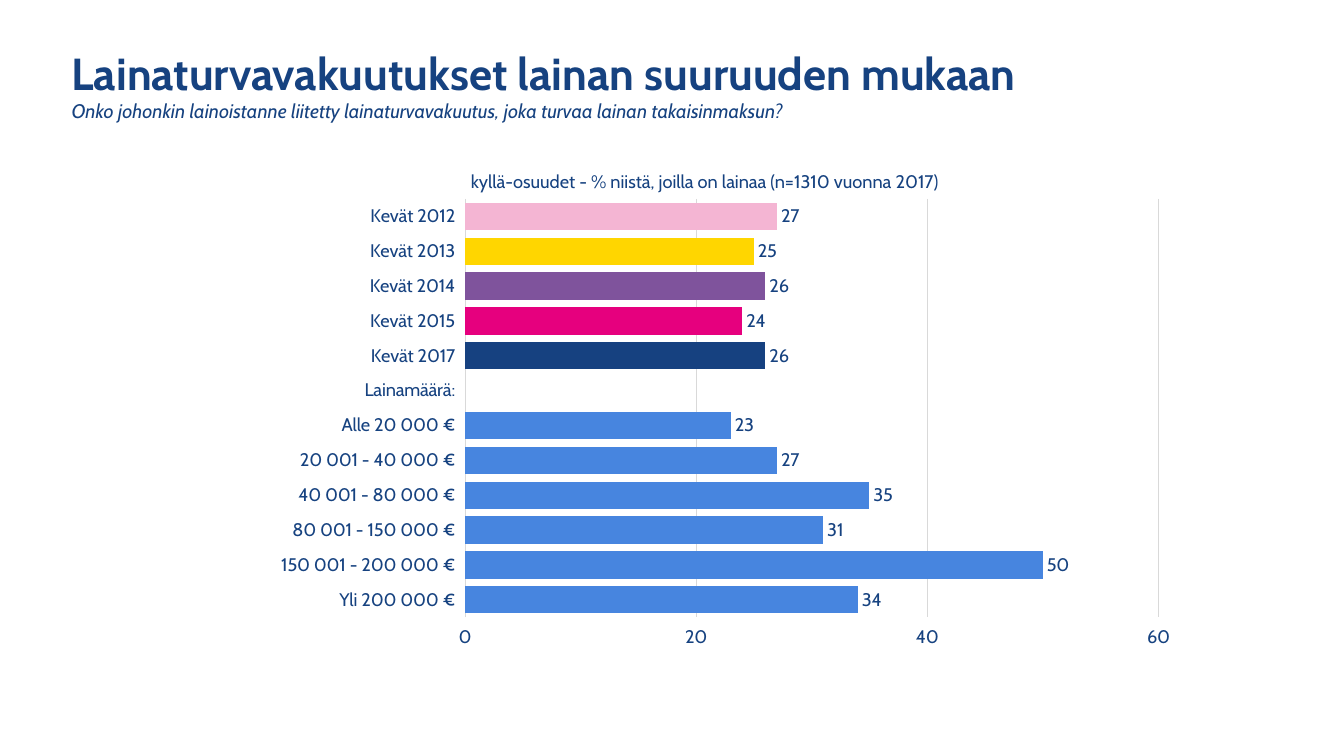
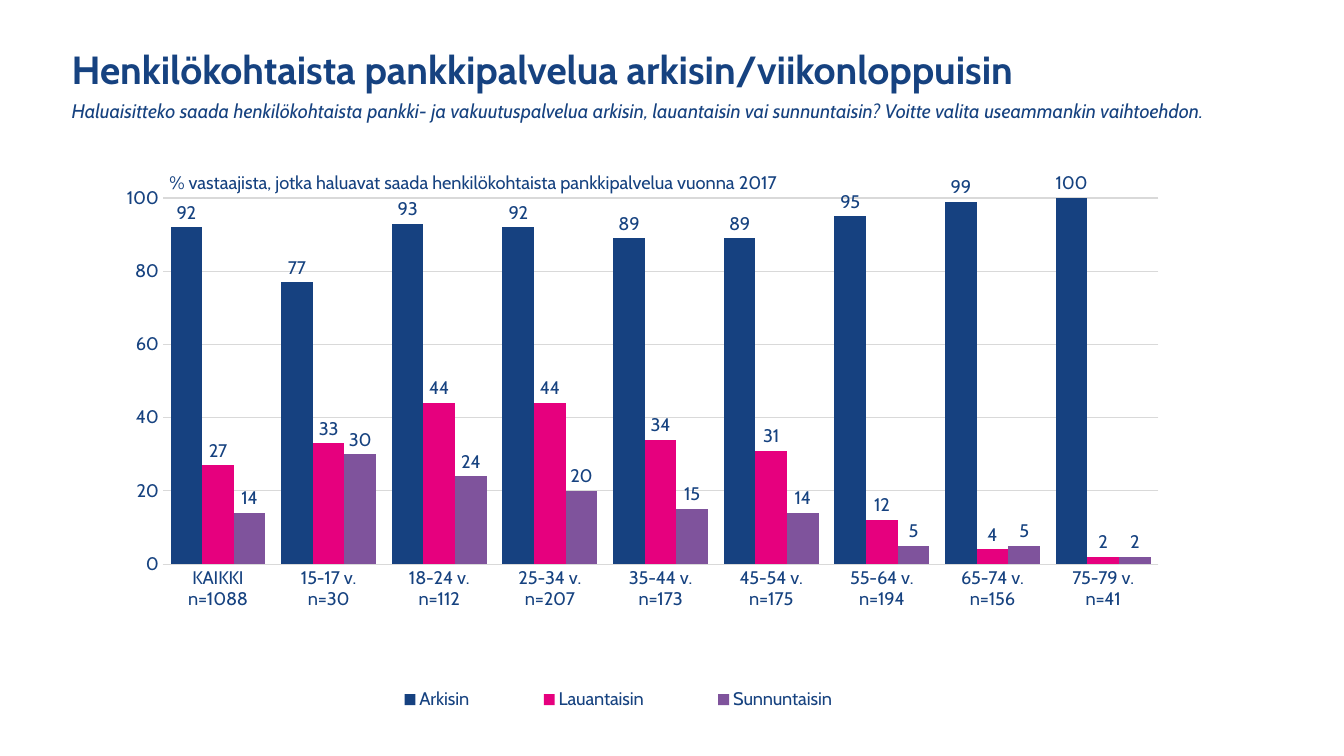
from lxml.etree import SubElement as Sub
from pptx import Presentation
from pptx.chart.data import CategoryChartData as Data
from pptx.dml.color import RGBColor as RGB
from pptx.enum.chart import XL_CHART_TYPE as Kind
from pptx.enum.chart import XL_LABEL_POSITION as Spot
from pptx.enum.chart import XL_LEGEND_POSITION as Side
from pptx.enum.chart import XL_TICK_LABEL_POSITION as Tick
from pptx.enum.chart import XL_TICK_MARK as Mark
from pptx.enum.text import MSO_ANCHOR as Anchor
from pptx.enum.text import MSO_AUTO_SIZE as Auto
from pptx.enum.text import PP_ALIGN as Align
from pptx.oxml.ns import qn
from pptx.util import Emu, Pt

PX = 9144
FONT = "Cabin"
HUES = {
    "ink": "164280",
    "navy": "164180",
    "blue": "4785DF",
    "pink": "F4B5D3",
    "gold": "FFD600",
    "plum": "7F539C",
    "rose": "E6007E",
    "grid": "D9D9D9",
}

LOANS = [
    ("Kevät 2012", 27, "pink"),
    ("Kevät 2013", 25, "gold"),
    ("Kevät 2014", 26, "plum"),
    ("Kevät 2015", 24, "rose"),
    ("Kevät 2017", 26, "navy"),
    ("Lainamäärä:", None, "blue"),
    ("Alle 20 000 €", 23, "blue"),
    ("20 001 - 40 000 €", 27, "blue"),
    ("40 001 - 80 000 €", 35, "blue"),
    ("80 001 - 150 000 €", 31, "blue"),
    ("150 001 - 200 000 €", 50, "blue"),
    ("Yli 200 000 €", 34, "blue"),
]
AGES = [
    ("KAIKKI", 1088), ("15-17 v.", 30), ("18-24 v.", 112),
    ("25-34 v.", 207), ("35-44 v.", 173), ("45-54 v.", 175),
    ("55-64 v.", 194), ("65-74 v.", 156), ("75-79 v.", 41),
]
DAYS = [
    ("Arkisin", [92, 77, 93, 92, 89, 89, 95, 99, 100], "navy"),
    ("Lauantaisin", [27, 33, 44, 44, 34, 31, 12, 4, 2], "rose"),
    ("Sunnuntaisin", [14, 30, 24, 20, 15, 14, 5, 5, 2], "plum"),
]


def px(*nums):
    return [Emu(num * PX) for num in nums]


def hue(name):
    return RGB.from_string(HUES[name])


def style(font, size, bold=False, slant=False):
    font.name = FONT
    font.size = Pt(size)
    font.bold = bold
    font.italic = slant
    font.color.rgb = hue("ink")


def write(shape, text, size, left=13, **look):
    frame = shape.text_frame
    frame.word_wrap = True
    frame.auto_size = Auto.NONE
    frame.vertical_anchor = Anchor.TOP
    frame.margin_left, frame.margin_right = px(left, 13)
    frame.margin_top, frame.margin_bottom = px(7, 7)
    frame.text = text
    para = frame.paragraphs[0]
    para.alignment = Align.LEFT
    style(para.font, size, **look)


def note(slide, box, text, size, **look):
    write(slide.shapes.add_textbox(*px(*box)), text, size, **look)


def start(deck, title, size, lead):
    slide = deck.slides.add_slide(deck.slide_layouts[5])
    head = slide.shapes.title
    head.left, head.top, head.width, head.height = px(58, 38, 1162, 67)
    write(head, title, size, bold=True)
    note(slide, (58, 91, 1255, 37), lead, 14, slant=True)
    return slide


def place(chart, tag, index, inner, box):
    host = chart.element.find(".//" + qn(tag))
    for old in host.findall(qn("c:layout")):
        host.remove(old)
    layout = host.makeelement(qn("c:layout"))
    host.insert(index, layout)
    man = Sub(layout, qn("c:manualLayout"))
    rows = [("layoutTarget", "inner")] if inner else []
    rows += [("xMode", "edge"), ("yMode", "edge")]
    rows += zip("xywh", box)
    for key, val in rows:
        Sub(man, qn("c:" + key)).set("val", str(val))


def rule(line, width):
    line.color.rgb = hue("grid")
    line.width = Pt(width)


def axes(chart, top, form, width):
    cat, val = chart.category_axis, chart.value_axis
    for axis in (cat, val):
        axis.major_tick_mark = axis.minor_tick_mark = Mark.NONE
        style(axis.tick_labels.font, 13)
    cat.has_major_gridlines = False
    rule(cat.format.line, width)
    val.minimum_scale, val.maximum_scale, val.major_unit = 0, top, 20
    val.has_major_gridlines = True
    rule(val.major_gridlines.format.line, 0.75)
    val.format.line.fill.background()
    val.tick_labels.number_format = form
    val.tick_labels.number_format_is_linked = False


def paint(item, name):
    item.format.fill.solid()
    item.format.fill.fore_color.rgb = hue(name)


def graph(slide, kind, box, cats, rows, gap, area):
    data = Data()
    data.categories = cats
    for name, vals, _ in rows:
        data.add_series(name, vals)
    chart = slide.shapes.add_chart(kind, *px(*box), data).chart
    style(chart.font, 13)
    chart.has_title = chart.has_legend = False
    plot = chart.plots[0]
    plot.vary_by_categories = False
    plot.gap_width, plot.overlap = gap, 0
    for bar, (_, _, tint) in zip(plot.series, rows):
        paint(bar, tint)
        bar.invert_if_negative = False
        tags = bar.data_labels
        tags.show_value = True
        tags.position = Spot.OUTSIDE_END
        style(tags.font, 13)
    place(chart, "c:plotArea", 0, True, area)
    return chart


def loans(deck):
    slide = start(
        deck, "Lainaturvavakuutukset lainan suuruuden mukaan", 32,
        "Onko johonkin lainoistanne liitetty lainaturvavakuutus, "
        "joka turvaa lainan takaisinmaksun?")
    cats, vals, tints = zip(*LOANS)
    chart = graph(slide, Kind.BAR_CLUSTERED, (0, 144, 1333, 593), cats,
                  [("Series 1", vals, "blue")], 28, (0.346, 0.09, 0.516, 0.7))
    axes(chart, 60, "General", 0.25)
    chart.category_axis.reverse_order = True
    chart.category_axis.tick_label_position = Tick.LOW
    chart.value_axis.tick_label_position = Tick.HIGH
    bar = chart.plots[0].series[0]
    for num, tint in enumerate(tints):
        if tint != "blue":
            paint(bar.points[num], tint)
    note(slide, (462, 162, 861, 35),
         "kyllä-osuudet - % niistä, joilla on lainaa (n=1310 vuonna 2017)",
         13, left=5)


def service(deck):
    slide = start(
        deck, "Henkilökohtaista pankkipalvelua arkisin/viikonloppuisin", 28,
        "Haluaisitteko saada henkilökohtaista pankki- ja vakuutuspalvelua "
        "arkisin, lauantaisin vai sunnuntaisin? "
        "Voitte valita useammankin vaihtoehdon.")
    cats = [f"{age}\nn={count}" for age, count in AGES]
    chart = graph(slide, Kind.COLUMN_CLUSTERED, (0, 165, 1333, 572), cats,
                  DAYS, 50, (0.121, 0.055, 0.741, 0.635))
    axes(chart, 100, "0", 0.75)
    chart.has_legend = True
    chart.legend.position = Side.BOTTOM
    chart.legend.include_in_layout = False
    style(chart.legend.font, 13)
    place(chart, "c:legend", 1, False, (0.25, 0.89, 0.42, 0.07))
    note(slide, (163, 163, 887, 35),
         "% vastaajista, jotka haluavat saada henkilökohtaista "
         "pankkipalvelua vuonna 2017", 13, left=5)


def main():
    deck = Presentation()
    deck.slide_width, deck.slide_height = px(1333, 750)
    loans(deck)
    service(deck)
    deck.save("out.pptx")


if __name__ == "__main__":
    main()
